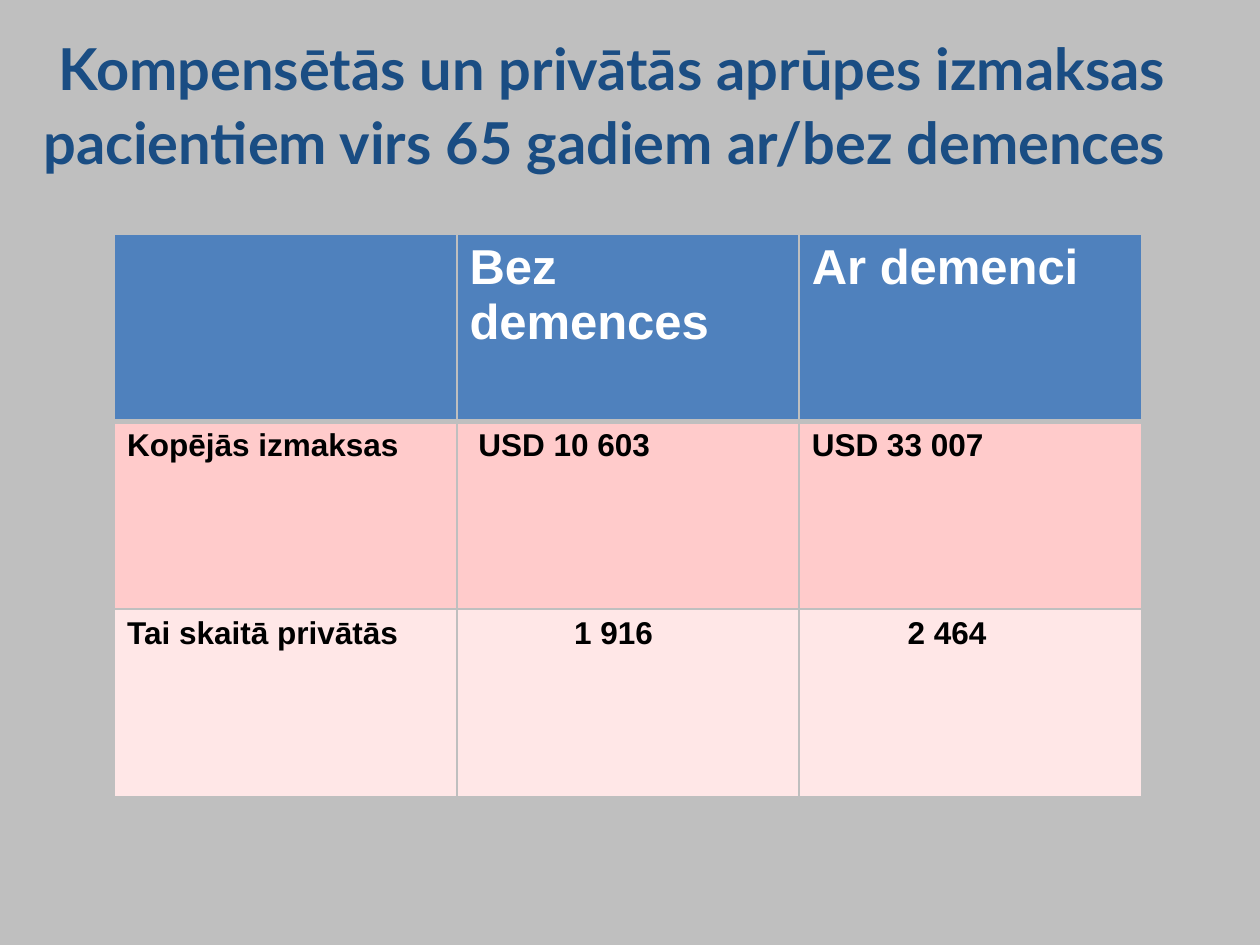
from lxml import etree
from pptx import Presentation
from pptx import util as u
from pptx.dml.color import RGBColor
from pptx.enum import text
from pptx.oxml import ns

WIDE, HIGH = u.Inches(10), u.Inches(7.5)
GREY = RGBColor(0xBF, 0xBF, 0xBF)
NAVY = RGBColor(0x1A, 0x4D, 0x83)
BLUE = RGBColor(0x4F, 0x81, 0xBD)
ROSE = RGBColor(0xFF, 0xCB, 0xCB)
PALE = RGBColor(0xFF, 0xE7, 0xE7)
WHITE = RGBColor(0xFF, 0xFF, 0xFF)
BLACK = RGBColor(0, 0, 0)

TITLE = "Kompensētās un privātās aprūpes izmaksas pacientiem virs 65 gadiem ar/bez demences"
ROWS = [
    (BLUE, WHITE, 28, [("", 0), ("Bez demences", 0), ("Ar demenci", 0)]),
    (ROSE, BLACK, 18, [("Kopējās izmaksas", 0), ("USD 10 603", 0.07), ("USD 33 007", 0)]),
    (PALE, BLACK, 18, [("Tai skaitā privātās", 0), ("1 916", 0.83), ("2 464", 0.76)]),
]


def add_run(para, words, face, size, color):
    """Add one bold run to a paragraph."""
    run = para.add_run()
    run.text = words
    font = run.font
    font.name, font.size, font.bold = face, u.Pt(size), True
    font.color.rgb = color


def add_title(slide):
    """Add the centred heading across the top of the slide."""
    box = slide.shapes.add_textbox(0, int(HIGH * 0.028), int(WIDE * 0.972), int(HIGH * 0.216))
    frame = box.text_frame
    frame.word_wrap = True
    frame.vertical_anchor = text.MSO_ANCHOR.TOP
    para = frame.paragraphs[0]
    para.alignment = text.PP_ALIGN.CENTER
    add_run(para, TITLE, "Lato", 33, NAVY)
    add_run(para, " ", "Lato", 36, NAVY)


def add_edge(cell, side, width):
    """Draw one grey border of a cell."""
    props = cell._tc.get_or_add_tcPr()
    line = etree.SubElement(props, ns.qn(f"a:ln{side}"), w=str(u.Pt(width)))
    fill = etree.SubElement(line, ns.qn("a:solidFill"))
    etree.SubElement(fill, ns.qn("a:srgbClr"), val=str(GREY))


def fill_cell(cell, row, words, inset, back, ink, size):
    """Set the borders, fill and text of a cell."""
    widths = {"L": 1, "R": 1, "T": 3 if row == 1 else 1, "B": 3 if row == 0 else 1}
    for side, width in widths.items():
        add_edge(cell, side, width)
    cell.fill.solid()
    cell.fill.fore_color.rgb = back
    para = cell.text_frame.paragraphs[0]
    if inset:
        para._p.get_or_add_pPr().set("marL", str(u.Inches(inset)))
    if words:
        add_run(para, words, "Arial", size, ink)


def add_costs(slide):
    """Add the cost table as an even grid."""
    count = len(ROWS)
    frame = slide.shapes.add_table(count, 3, int(WIDE * 0.091), int(HIGH * 0.248),
                                   int(WIDE * 0.815), int(HIGH * 0.595))
    table = frame.table
    for row, (back, ink, size, cells) in enumerate(ROWS):
        for col, (words, inset) in enumerate(cells):
            fill_cell(table.cell(row, col), row, words, inset, back, ink, size)


def main():
    """Build and save the slide."""
    deck = Presentation()
    deck.slide_width, deck.slide_height = WIDE, HIGH
    slide = deck.slides.add_slide(deck.slide_layouts[6])
    slide.background.fill.solid()
    slide.background.fill.fore_color.rgb = GREY
    add_title(slide)
    add_costs(slide)
    deck.save("out.pptx")


if __name__ == "__main__":
    main()
